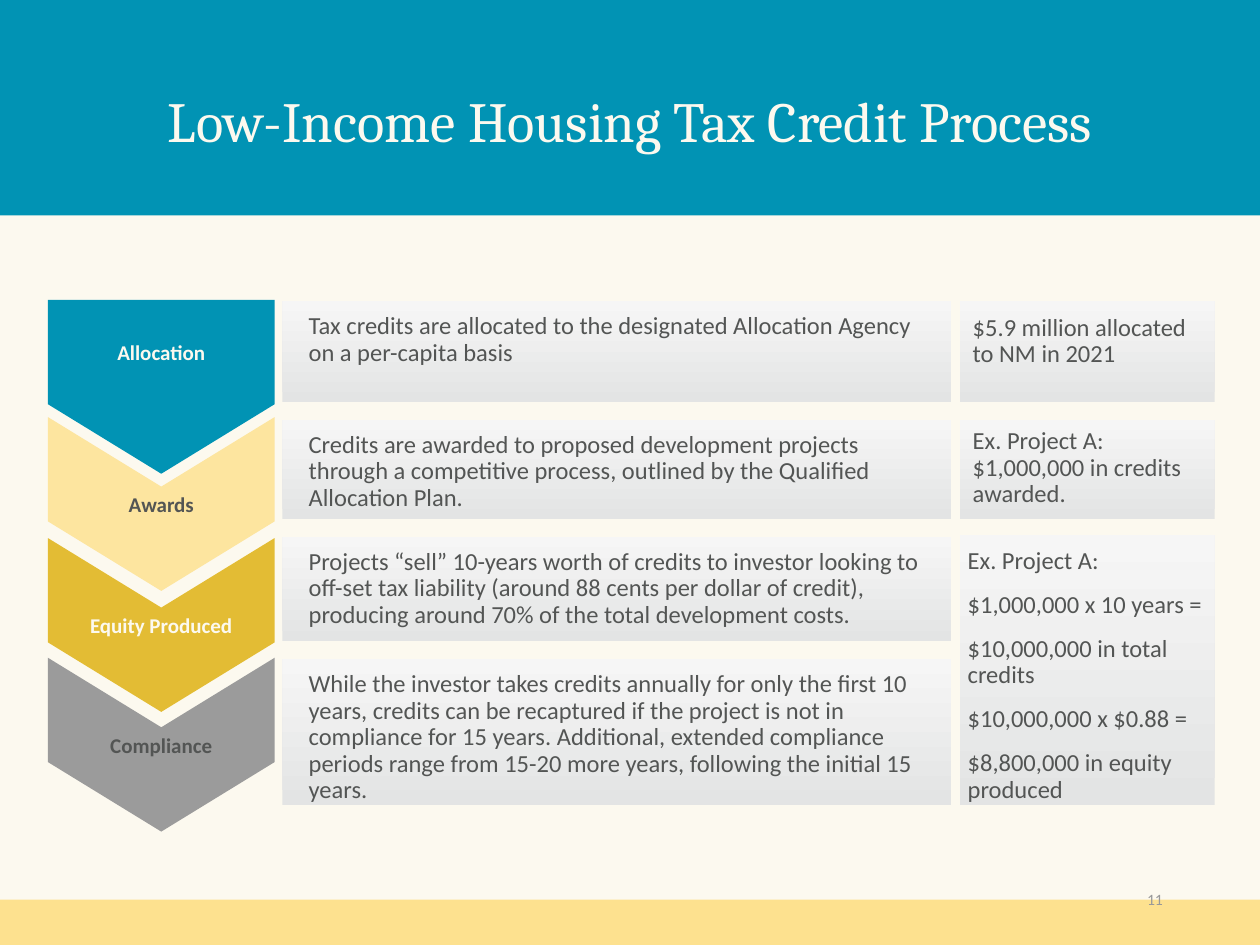
from pptx import Presentation
from pptx.dml.color import RGBColor
from pptx.enum.shapes import MSO_SHAPE
from pptx.enum.text import MSO_ANCHOR, MSO_AUTO_SIZE, PP_ALIGN
from pptx.util import Inches, Pt

CREAM, TEAL, INK = "FCF9EF", "0193B4", "535554"
ARROW_LEFT, ARROW_WIDTH, ARROW_HEIGHT = 0.38, 1.8, 1.38
DETAIL_LEFT, DETAIL_WIDTH = 2.24, 5.31
EXAMPLE_LEFT, EXAMPLE_WIDTH = 7.62, 2.02

STAGES = [
    ("Allocation", TEAL, CREAM, 2.38, 2.39, 0.8,
     "Tax credits are allocated to the designated Allocation Agency on a per-capita basis"),
    ("Awards", "FDE59F", INK, 3.31, 3.33, 0.79,
     "Credits are awarded to proposed development projects through a competitive process, "
     "outlined by the Qualified Allocation Plan."),
    ("Equity Produced", "E3BC34", CREAM, 4.27, 4.26, 0.83,
     "Projects “sell” 10-years worth of credits to investor looking to off-set tax liability "
     "(around 88 cents per dollar of credit), producing around 70% of the total development costs."),
    ("Compliance", "9B9B9B", INK, 5.22, 5.23, 1.16,
     "While the investor takes credits annually for only the first 10 years, credits can be "
     "recaptured if the project is not in compliance for 15 years. Additional, extended compliance "
     "periods range from 15-20 more years, following the initial 15 years."),
]
EXAMPLES = [
    (2.39, 0.8, 0.1, 0.11, ["$5.9 million allocated to NM in 2021"]),
    (3.33, 0.79, 0.1, 0.07, ["Ex. Project A: $1,000,000 in credits awarded."]),
    (4.25, 2.14, 0.06, 0.1, [
        "Ex. Project A:",
        "$1,000,000 x 10 years =",
        "$10,000,000 in total credits",
        "$10,000,000 x $0.88 =",
        "$8,800,000 in equity produced",
    ]),
]


def rgb(hex_color):
    """Turn a hex string into a colour."""
    return RGBColor.from_string(hex_color)


def add_run(paragraph, text, size, color, font="Calibri", bold=False):
    """Append one styled run to a paragraph."""
    run = paragraph.add_run()
    run.text = text
    run.font.size = Pt(size)
    run.font.name = font
    run.font.bold = bold
    run.font.color.rgb = rgb(color)


def add_plain_shape(slide, preset, left, top, width, height):
    """Add a preset shape without outline or shadow."""
    shape = slide.shapes.add_shape(
        preset, Inches(left), Inches(top), Inches(width), Inches(height))
    shape.shadow.inherit = False
    shape.line.fill.background()
    return shape


def add_band(slide, top, height, color):
    """Add a full-width band of one colour."""
    band = add_plain_shape(slide, MSO_SHAPE.RECTANGLE, 0, top, 10, height)
    band.fill.solid()
    band.fill.fore_color.rgb = rgb(color)


def add_line(slide, left, top, width, height, text, size, color, align, anchor, font="Calibri"):
    """Add a one-line text box for the title or the page number."""
    box = slide.shapes.add_textbox(Inches(left), Inches(top), Inches(width), Inches(height))
    frame = box.text_frame
    frame.word_wrap = True
    frame.vertical_anchor = anchor
    frame.margin_left = frame.margin_right = Inches(0.08)
    frame.margin_top = frame.margin_bottom = Inches(0.04)
    paragraph = frame.paragraphs[0]
    paragraph.alignment = align
    paragraph.line_spacing = 0.9
    add_run(paragraph, text, size, color, font)


def add_stage_arrow(slide, left, top, width, height, label, color, label_color, notched):
    """Add a downward stage arrow with an upright label."""
    preset = MSO_SHAPE.NOTCHED_RIGHT_ARROW if notched else MSO_SHAPE.RIGHT_ARROW
    shift = (width - height) / 2
    arrow = add_plain_shape(slide, preset, left + shift, top - shift, height, width)
    arrow.rotation = 90
    arrow.adjustments[0] = 1
    arrow.adjustments[1] = 0.4
    arrow.fill.solid()
    arrow.fill.fore_color.rgb = rgb(color)
    frame = arrow.text_frame
    frame.vertical_anchor = MSO_ANCHOR.MIDDLE
    frame._txBody.bodyPr.set("vert", "vert270")
    paragraph = frame.paragraphs[0]
    paragraph.alignment = PP_ALIGN.CENTER
    add_run(paragraph, label, 12, label_color, bold=True)


def add_panel(slide, left, top, width, height, indent, drop, text_width, lines):
    """Add a shaded panel with its text set in from the top left."""
    panel = add_plain_shape(slide, MSO_SHAPE.RECTANGLE, left, top, width, height)
    panel.fill.gradient()
    panel.fill.gradient_angle = 90
    for stop, color in zip(panel.fill.gradient_stops, ("E3E4E4", "F6F6F6")):
        stop.color.rgb = rgb(color)
    for stop, position in zip(panel.fill.gradient_stops, (0, 1)):
        stop.position = position

    box = slide.shapes.add_textbox(
        Inches(left + indent), Inches(top + drop), Inches(text_width), Inches(height - drop))
    frame = box.text_frame
    frame.word_wrap = True
    frame.auto_size = MSO_AUTO_SIZE.SHAPE_TO_FIT_TEXT
    frame.margin_left = frame.margin_right = frame.margin_top = frame.margin_bottom = 0
    for index, line in enumerate(lines):
        paragraph = frame.add_paragraph() if index else frame.paragraphs[0]
        paragraph.line_spacing = 0.9
        paragraph.space_after = Pt(10)
        add_run(paragraph, line, 14, INK)


def main():
    """Build the tax credit process slide."""
    presentation = Presentation()
    presentation.slide_width = Inches(10)
    presentation.slide_height = Inches(7.5)
    slide = presentation.slides.add_slide(presentation.slide_layouts[6])
    slide.background.fill.solid()
    slide.background.fill.fore_color.rgb = rgb(CREAM)

    add_band(slide, 7.14, 0.36, "FDE18F")
    add_band(slide, 0, 1.71, TEAL)
    add_line(slide, 1.25, 0.43, 7.5, 0.84, "Low-Income Housing Tax Credit Process",
             32.4, CREAM, PP_ALIGN.CENTER, MSO_ANCHOR.BOTTOM, "Cambria")
    add_line(slide, 7.06, 6.95, 2.25, 0.4, "11", 9, "999999", PP_ALIGN.RIGHT, MSO_ANCHOR.MIDDLE)

    for index, (label, color, label_color, arrow_top, top, height, detail) in enumerate(STAGES):
        add_stage_arrow(slide, ARROW_LEFT, arrow_top, ARROW_WIDTH, ARROW_HEIGHT,
                        label, color, label_color, notched=index > 0)
        add_panel(slide, DETAIL_LEFT, top, DETAIL_WIDTH, height, 0.21, 0.1, 4.87, [detail])
    for top, height, indent, drop, lines in EXAMPLES:
        add_panel(slide, EXAMPLE_LEFT, top, EXAMPLE_WIDTH, height, indent, drop, 1.88, lines)

    presentation.save("out.pptx")


if __name__ == "__main__":
    main()
